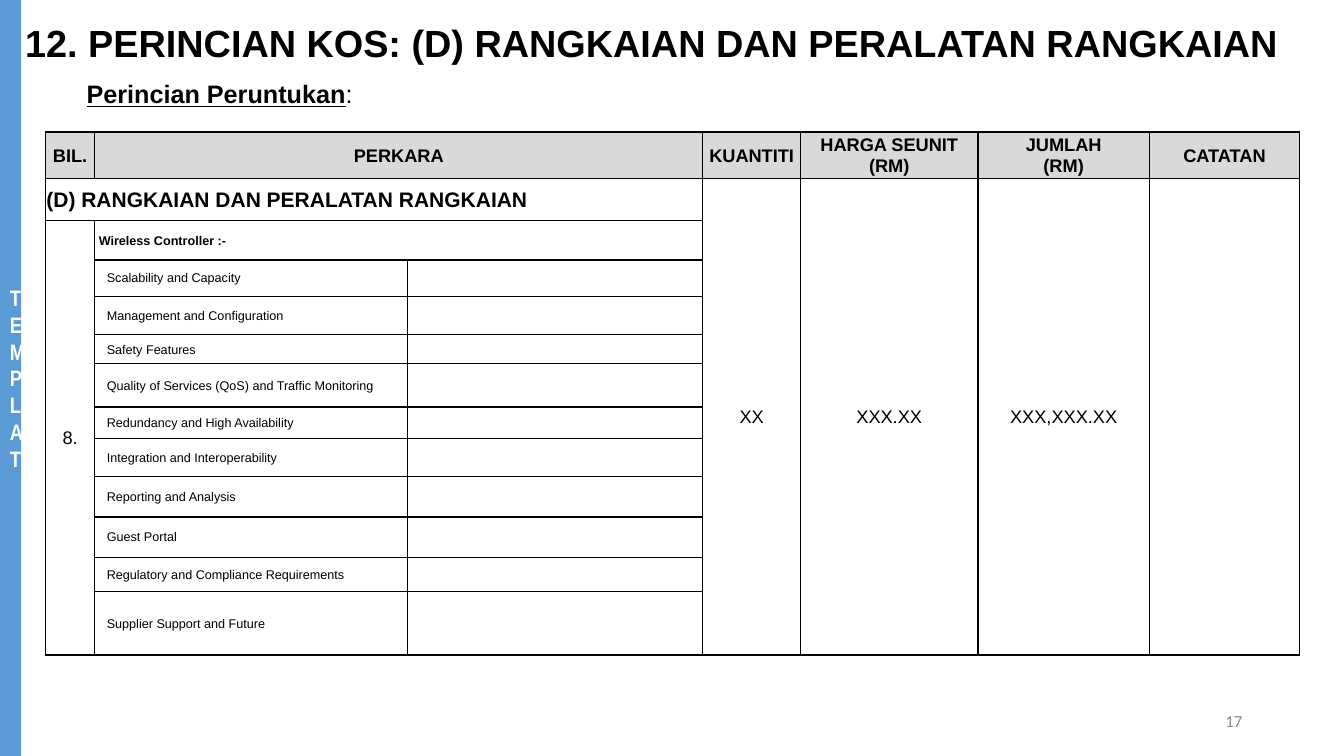
"""Build the cost breakdown slide for networking and network equipment."""
from dataclasses import dataclass

from lxml.etree import SubElement
from pptx import Presentation
from pptx.dml.color import RGBColor
from pptx.enum.shapes import MSO_SHAPE
from pptx.enum.text import MSO_ANCHOR, MSO_AUTO_SIZE, PP_ALIGN
from pptx.oxml.ns import qn
from pptx.util import Inches, Pt


@dataclass(frozen=True)
class Theme:
    font: str = "Arial"
    sidebar_font: str = "Arial Narrow"
    number_font: str = "Calibri"
    ink: str = "000000"
    paper: str = "FFFFFF"
    accent: str = "5B9BD5"
    header: str = "D9D9D9"
    muted: str = "888888"
    title: int = 27
    subtitle: int = 18
    sidebar: int = 16
    section: int = 15
    body: int = 13
    number: int = 12
    detail: int = 9


theme = Theme()


def add_run(paragraph, text, size, bold=False, color=theme.ink, font=theme.font):
    run = paragraph.add_run()
    run.text = text
    run.font.size = Pt(size)
    run.font.bold = bold
    run.font.name = font
    run.font.color.rgb = RGBColor.from_string(color)
    return run


def write_cell(cell, text, size, bold=False, align=PP_ALIGN.LEFT, indent=0.01):
    cell.margin_left = Inches(indent)
    for index, line in enumerate(text.split("\n")):
        frame = cell.text_frame
        paragraph = frame.add_paragraph() if index else frame.paragraphs[0]
        paragraph.alignment = align
        add_run(paragraph, line, size, bold)


prs = Presentation()
prs.slide_width = Inches(13.33)
prs.slide_height = Inches(7.5)
slide = prs.slides.add_slide(prs.slide_layouts[5])

sidebar = slide.shapes.add_shape(MSO_SHAPE.RECTANGLE, 0, 0, Inches(0.21), prs.slide_height)
sidebar.shadow.inherit = False
sidebar.fill.solid()
sidebar.fill.fore_color.rgb = RGBColor.from_string(theme.accent)
sidebar.line.fill.background()
sidebar.text_frame.word_wrap = True
sidebar.text_frame.vertical_anchor = MSO_ANCHOR.MIDDLE
sidebar_label = sidebar.text_frame.paragraphs[0]
sidebar_label.alignment = PP_ALIGN.CENTER
add_run(sidebar_label, "TEMPLAT", theme.sidebar, True, theme.paper, theme.sidebar_font)

page_number = slide.shapes.add_textbox(Inches(9.42), Inches(6.95), Inches(3), Inches(0.4))
page_number.text_frame.word_wrap = True
page_number.text_frame.vertical_anchor = MSO_ANCHOR.MIDDLE
page_line = page_number.text_frame.paragraphs[0]
page_line.alignment = PP_ALIGN.RIGHT
add_run(page_line, "17", theme.number, color=theme.muted, font=theme.number_font)

heading = slide.shapes.title
heading.left, heading.top = Inches(0.15), Inches(0.15)
heading.width, heading.height = Inches(13.48), Inches(0.8)
heading.text_frame.auto_size = MSO_AUTO_SIZE.NONE
heading.text_frame.vertical_anchor = MSO_ANCHOR.TOP
heading_line = heading.text_frame.paragraphs[0]
heading_line.alignment = PP_ALIGN.LEFT
add_run(heading_line, "12. PERINCIAN KOS: (D) RANGKAIAN DAN PERALATAN RANGKAIAN", theme.title, True)

allocation = slide.shapes.add_textbox(Inches(0.76), Inches(0.73), Inches(8.35), Inches(0.4))
allocation.text_frame.word_wrap = True
allocation_line = allocation.text_frame.paragraphs[0]
allocation_line.alignment = PP_ALIGN.JUSTIFY
add_run(allocation_line, "Perincian Peruntukan", theme.subtitle, True).font.underline = True
add_run(allocation_line, ":", theme.subtitle)

column_widths = [0.49, 3.1, 2.93, 0.97, 1.76, 1.7, 1.49]
row_heights = [0.46, 0.42, 0.39, 0.36, 0.38, 0.29, 0.43, 0.31, 0.38, 0.4, 0.4, 0.34, 0.63]
costs = slide.shapes.add_table(
    len(row_heights), len(column_widths),
    Inches(0.45), Inches(1.31), Inches(12.43), Inches(5.2),
).table
costs.first_row = False
costs.horz_banding = False
for column, width in zip(costs.columns, column_widths):
    column.width = Inches(width)
for row, height in zip(costs.rows, row_heights):
    row.height = Inches(height)

for row_index, row in enumerate(costs.rows):
    for cell in row.cells:
        cell.vertical_anchor = MSO_ANCHOR.MIDDLE
        cell.margin_left = cell.margin_right = cell.margin_top = Inches(0.01)
        cell.margin_bottom = 0
        properties = cell._tc.get_or_add_tcPr()
        for side in ("a:lnL", "a:lnR", "a:lnT", "a:lnB"):
            border = SubElement(properties, qn(side), w=str(Pt(1)))
            border_fill = SubElement(border, qn("a:solidFill"))
            SubElement(border_fill, qn("a:srgbClr"), val=theme.ink)
        cell.fill.solid()
        cell.fill.fore_color.rgb = RGBColor.from_string(theme.paper if row_index else theme.header)
        SubElement(cell.text_frame.paragraphs[0]._p, qn("a:endParaRPr"), sz=str(theme.detail * 100))

last_row = len(row_heights) - 1
merges = [(0, 1, 0, 2), (1, 0, 1, 2), (2, 0, last_row, 0), (2, 1, 2, 2)]
merges += [(1, column, last_row, column) for column in range(3, 7)]
for top, left, bottom, right in merges:
    costs.cell(top, left).merge(costs.cell(bottom, right))

headers = {0: "BIL.", 1: "PERKARA", 3: "KUANTITI", 4: "HARGA SEUNIT\n(RM)",
           5: "JUMLAH\n(RM)", 6: "CATATAN"}
for column, label in headers.items():
    write_cell(costs.cell(0, column), label, theme.body, True, PP_ALIGN.CENTER)

write_cell(costs.cell(1, 0), "(D) RANGKAIAN DAN PERALATAN RANGKAIAN", theme.section, True)
write_cell(costs.cell(2, 0), "8.", theme.body, align=PP_ALIGN.CENTER)
for column, amount in enumerate(["XX", "XXX.XX", "XXX,XXX.XX"], start=3):
    write_cell(costs.cell(1, column), amount, theme.body, align=PP_ALIGN.CENTER)

write_cell(costs.cell(2, 1), "Wireless Controller :-", theme.detail, True, indent=0.04)
features = [
    "Scalability and Capacity",
    "Management and Configuration",
    "Safety Features",
    "Quality of Services (QoS) and Traffic Monitoring",
    "Redundancy and High Availability",
    "Integration and Interoperability",
    "Reporting and Analysis",
    "Guest Portal",
    "Regulatory and Compliance Requirements",
    "Supplier Support and Future",
]
for row_index, feature in enumerate(features, start=3):
    write_cell(costs.cell(row_index, 1), feature, theme.detail, indent=0.12)

prs.save("out.pptx")
